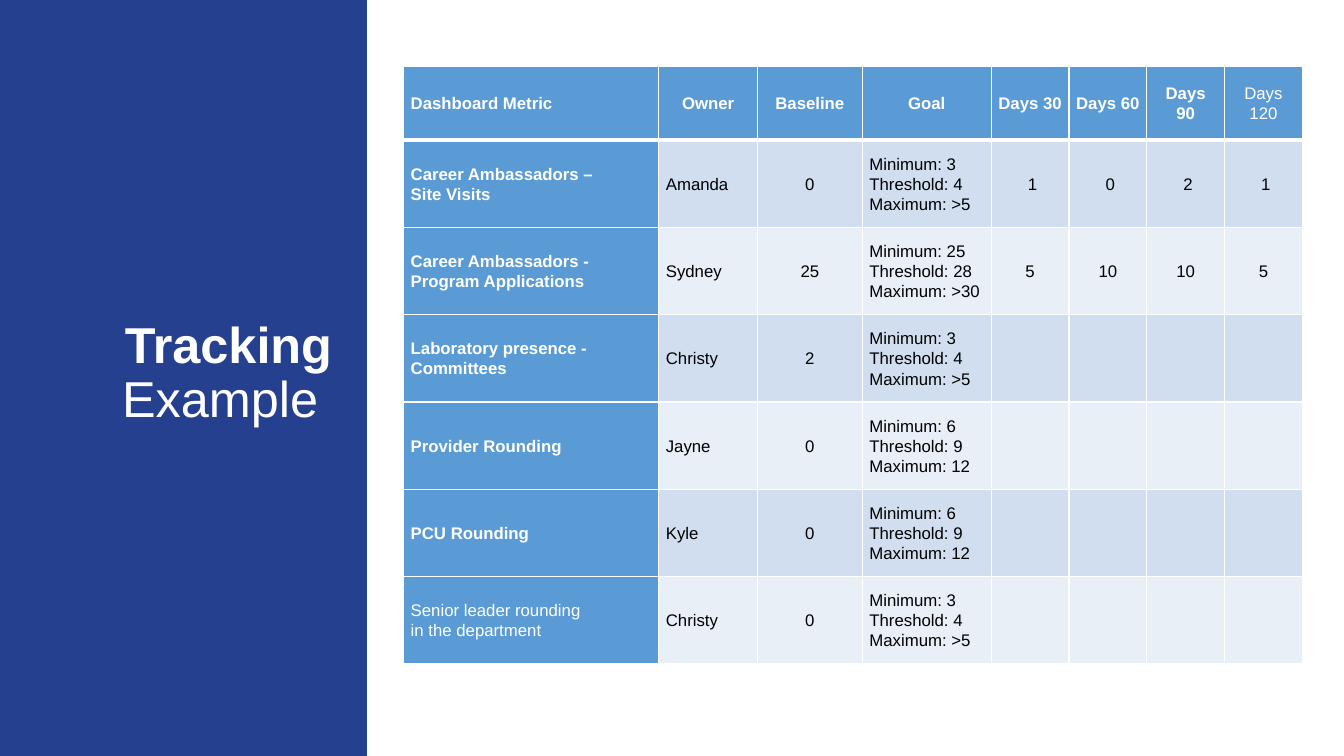
from pptx import Presentation
from pptx.dml.color import RGBColor
from pptx.enum.shapes import MSO_SHAPE
from pptx.enum.text import MSO_ANCHOR as ANCHOR, PP_ALIGN as ALIGN
from pptx.oxml import parse_xml
from pptx.oxml.ns import nsdecls
from pptx.util import Cm, Pt

NAVY = RGBColor(0x25, 0x40, 0x8F)
BLUE = RGBColor(0x5B, 0x9B, 0xD5)
BAND_DARK = RGBColor(0xD0, 0xDE, 0xEF)
BAND_LIGHT = RGBColor(0xE9, 0xEF, 0xF7)
WHITE = RGBColor(0xFF, 0xFF, 0xFF)
BLACK = RGBColor(0, 0, 0)

FONT = "Arial"
SLIDE_WIDTH, SLIDE_HEIGHT = 33.87, 19.05
COLUMN_WIDTHS = [6.43, 2.49, 2.64, 3.25] + [1.96] * 4
HEADER_HEIGHT, ROW_HEIGHT = 1.85, 2.2
LEFT_COLUMNS = (0, 1, 3)  # the others are centred outside the header
GOAL_LABELS = ("Minimum", "Threshold", "Maximum")

# "\n" starts a paragraph, "\v" breaks a line
HEADERS = ["Dashboard Metric", "Owner", "Baseline", "Goal",
           "Days 30", "Days 60", "Days\n90", "Days\n120"]
# metric, owner, baseline, goal levels, results by period
METRICS = [
    ("Career Ambassadors – \vSite Visits", "Amanda", "0", ("3", "4", ">5"),
     [" 1", " 0", " 2", " 1"]),
    ("Career Ambassadors - Program Applications", "Sydney", "25",
     ("25", "28", ">30"), ["5", "10", "10", "5"]),
    ("Laboratory presence - Committees", "Christy", "2", ("3", "4", ">5"), [""] * 4),
    ("Provider Rounding", "Jayne", "0", ("6", "9", "12"), [""] * 4),
    ("PCU Rounding", "Kyle", "0", ("6", "9", "12"), [""] * 4),
    ("Senior leader rounding \vin the department", "Christy", "0",
     ("3", "4", ">5"), [""] * 4),
]


def add_text(paragraph, text, size=12, color=BLACK, bold=False,
             align=ALIGN.LEFT, spacing=1.07):
    """Append formatted text to a paragraph."""
    paragraph.alignment = align
    paragraph.line_spacing = spacing
    for index, line in enumerate(text.split("\v")):
        if index:
            paragraph.add_line_break()
        run = paragraph.add_run()
        run.text = line
        run.font.name = FONT
        run.font.size = Pt(size)
        run.font.bold = bold
        run.font.color.rgb = color


def set_borders(cell, bottom=1, top=1):
    """Draw white borders; they must come before the cell's fill."""
    properties = cell._tc.get_or_add_tcPr()
    widths = {"lnL": 1, "lnR": 1, "lnT": top, "lnB": bottom}
    for index, (side, width) in enumerate(widths.items()):
        properties.insert(index, parse_xml(
            f'<a:{side} {nsdecls("a")} w="{Pt(width)}"><a:solidFill>'
            f'<a:srgbClr val="{WHITE}"/></a:solidFill></a:{side}>'))


def fill_cell(cell, text, fill, **text_format):
    cell.fill.solid()
    cell.fill.fore_color.rgb = fill
    cell.vertical_anchor = ANCHOR.MIDDLE
    cell.margin_left = cell.margin_right = Cm(0.18)
    cell.margin_top = cell.margin_bottom = 0
    if not text:
        return
    frame = cell.text_frame
    for index, line in enumerate(text.split("\n")):
        paragraph = frame.add_paragraph() if index else frame.paragraphs[0]
        add_text(paragraph, line, **text_format)


def add_title_panel(slide, left, top, width, height):
    # Coloured side panel
    panel = slide.shapes.add_shape(
        MSO_SHAPE.RECTANGLE, Cm(left), Cm(top), Cm(width), Cm(height))
    panel.shadow.inherit = False
    panel.fill.solid()
    panel.fill.fore_color.rgb = NAVY
    panel.line.fill.background()

    # Title, centred vertically in the panel's lower middle
    title = slide.shapes.add_textbox(
        Cm(left + 0.64), Cm(top + 7.59), Cm(width - 1.27), Cm(3.68))
    frame = title.text_frame
    frame.word_wrap = True
    frame.vertical_anchor = ANCHOR.MIDDLE
    for word, bold in (("Tracking ", True), ("Example ", False)):
        add_text(frame.paragraphs[0], word, size=36, color=WHITE, bold=bold,
                 align=ALIGN.RIGHT, spacing=0.9)


def add_tracking_table(slide, left, top):
    row_count, column_count = len(METRICS) + 1, len(HEADERS)
    height = HEADER_HEIGHT + ROW_HEIGHT * len(METRICS)
    table = slide.shapes.add_table(
        row_count, column_count, Cm(left), Cm(top),
        Cm(sum(COLUMN_WIDTHS)), Cm(height)).table
    for column, width in zip(table.columns, COLUMN_WIDTHS):
        column.width = Cm(width)
    for index, row in enumerate(table.rows):
        row.height = Cm(ROW_HEIGHT if index else HEADER_HEIGHT)

    # Header row: the last heading is in regular weight
    for column, heading in enumerate(HEADERS):
        cell = table.cell(0, column)
        fill_cell(cell, heading, BLUE, color=WHITE,
                  bold=column < column_count - 1,
                  align=ALIGN.CENTER if column else ALIGN.LEFT)
        set_borders(cell, bottom=3)

    # Metric rows: the last metric is in regular weight
    for row, (metric, owner, baseline, levels, results) in enumerate(METRICS, 1):
        goal = "\n".join(f"{label}: {level}"
                         for label, level in zip(GOAL_LABELS, levels))
        band = BAND_DARK if row % 2 else BAND_LIGHT
        for column, text in enumerate([metric, owner, baseline, goal, *results]):
            is_metric = column == 0
            cell = table.cell(row, column)
            fill_cell(cell, text, BLUE if is_metric else band,
                      color=WHITE if is_metric else BLACK,
                      bold=is_metric and row < row_count - 1,
                      align=ALIGN.LEFT if column in LEFT_COLUMNS else ALIGN.CENTER)
            set_borders(cell, top=3 if row == 1 else 1)


def main():
    presentation = Presentation()
    presentation.slide_width = Cm(SLIDE_WIDTH)
    presentation.slide_height = Cm(SLIDE_HEIGHT)
    slide = presentation.slides.add_slide(presentation.slide_layouts[6])
    add_title_panel(slide, 0, 0, 9.25, SLIDE_HEIGHT)
    add_tracking_table(slide, 10.17, 1.68)
    presentation.save("out.pptx")


if __name__ == "__main__":
    main()
